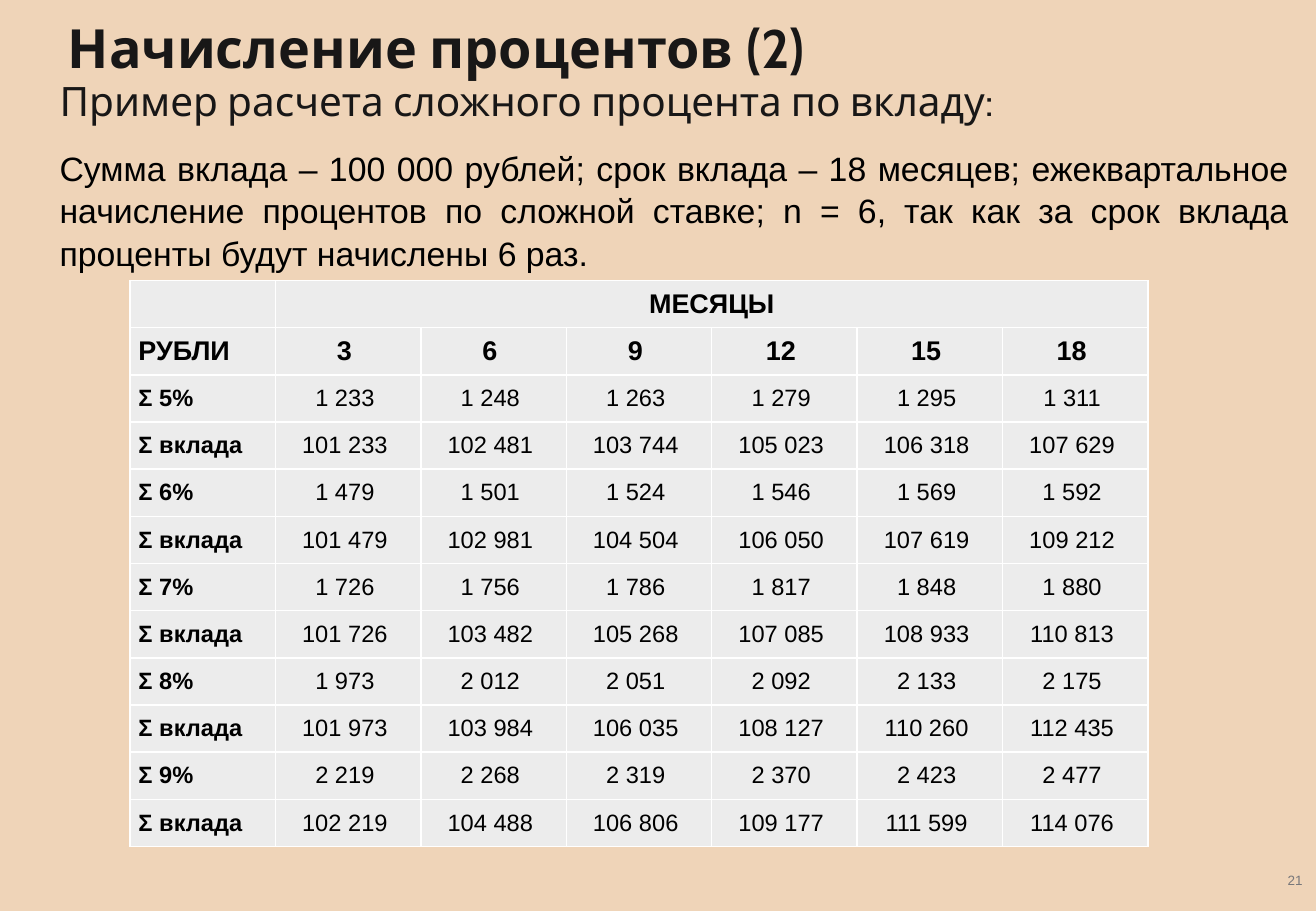
import dataclasses

import lxml.etree
import pptx
import pptx.dml.color
import pptx.enum.text
import pptx.oxml.ns
import pptx.util

Inches = pptx.util.Inches
Pt = pptx.util.Pt
Align = pptx.enum.text.PP_ALIGN
Anchor = pptx.enum.text.MSO_ANCHOR

COLORS = {
    "background": "EFD4B8",
    "heading": "181717",
    "body": "000000",
    "page": "77777A",
    "cell": "ECECEC",
    "border": "FFFFFF",
}


@dataclasses.dataclass
class Style:
    size: float
    color: str = "body"
    font: str = "Arial"
    bold: bool = False
    align: Align = Align.LEFT
    before: float = 0
    after: float = 0
    spacing: float = 1.0


@dataclasses.dataclass
class TextBlock:
    box: tuple[float, float, float, float]
    lines: list[tuple[str, Style]]
    insets: tuple[float, float] = (0, 0)
    anchor: Anchor = Anchor.TOP


def rgb(name: str) -> pptx.dml.color.RGBColor:
    return pptx.dml.color.RGBColor.from_string(COLORS[name])


def write(paragraph, text: str, style: Style) -> None:
    paragraph.text = text
    paragraph.alignment = style.align
    paragraph.space_before = Pt(style.before)
    paragraph.space_after = Pt(style.after)
    paragraph.line_spacing = style.spacing
    for run in paragraph.runs:
        run.font.name = style.font
        run.font.size = Pt(style.size)
        run.font.bold = style.bold
        run.font.color.rgb = rgb(style.color)


def add_text(slide, block: TextBlock) -> None:
    frame = slide.shapes.add_textbox(*map(Inches, block.box)).text_frame
    frame.word_wrap = True
    frame.vertical_anchor = block.anchor
    frame.margin_left = frame.margin_right = Inches(block.insets[0])
    frame.margin_top = frame.margin_bottom = Inches(block.insets[1])
    for index, (text, style) in enumerate(block.lines):
        paragraph = frame.add_paragraph() if index else frame.paragraphs[0]
        write(paragraph, text, style)


def format_cell(cell) -> None:
    cell.vertical_anchor = Anchor.MIDDLE
    cell.margin_left = cell.margin_right = Inches(0.07)
    cell.margin_top = cell.margin_bottom = 0
    cell.fill.solid()
    cell.fill.fore_color.rgb = rgb("cell")
    # Borders come before the fill in the cell properties
    qn = pptx.oxml.ns.qn
    properties = cell._tc.get_or_add_tcPr()
    for index, side in enumerate(("lnL", "lnR", "lnT", "lnB")):
        line = lxml.etree.Element(qn(f"a:{side}"), w=str(Pt(1)))
        fill = lxml.etree.SubElement(line, qn("a:solidFill"))
        lxml.etree.SubElement(fill, qn("a:srgbClr"), val=COLORS["border"])
        properties.insert(index, line)


# Content
HEADING = Style(32, "heading", "Cabin", bold=True, before=10, spacing=0.9)
SUBHEADING = Style(24, "heading", "Cabin", align=Align.JUSTIFY, before=6, after=6)
BODY = Style(20, align=Align.JUSTIFY, before=6, after=6, spacing=1.05)
PAGE = Style(8, "page", align=Align.RIGHT)
TABLE_HEAD = Style(16, bold=True, align=Align.CENTER)
TABLE_CORNER = Style(16, bold=True)
ROW_LABEL = Style(14, bold=True)
AMOUNT = Style(14, align=Align.CENTER)

EXAMPLE = TextBlock((0.49, 0.63, 10.12, 6.36), [
    ("Пример расчета сложного процента по вкладу:", SUBHEADING),
    ("Сумма вклада – 100 000 рублей; срок вклада – 18 месяцев; "
     "ежеквартальное начисление процентов по сложной ставке; n = 6, "
     "так как за срок вклада проценты будут начислены 6 раз. ", BODY),
])
TITLE = TextBlock((0.46, 0.13, 10.37, 0.57),
                  [("Начисление процентов (2)", HEADING)], (0.1, 0.05))
PAGE_NUMBER = TextBlock((10.29, 6.99, 0.43, 0.51), [("21", PAGE)],
                        anchor=Anchor.MIDDLE)

MONTHS = [3, 6, 9, 12, 15, 18]
# Rate: (interest per quarter, deposit after each quarter)
DEPOSITS = {
    5: ([1233, 1248, 1263, 1279, 1295, 1311],
        [101233, 102481, 103744, 105023, 106318, 107629]),
    6: ([1479, 1501, 1524, 1546, 1569, 1592],
        [101479, 102981, 104504, 106050, 107619, 109212]),
    7: ([1726, 1756, 1786, 1817, 1848, 1880],
        [101726, 103482, 105268, 107085, 108933, 110813]),
    8: ([1973, 2012, 2051, 2092, 2133, 2175],
        [101973, 103984, 106035, 108127, 110260, 112435]),
    9: ([2219, 2268, 2319, 2370, 2423, 2477],
        [102219, 104488, 106806, 109177, 111599, 114076]),
}


def add_deposit_table(slide) -> None:
    rows: list[tuple[str, list[int]]] = [("РУБЛИ", MONTHS)]
    for rate, (interest, deposit) in DEPOSITS.items():
        rows += [(f"Σ {rate}%", interest), ("Σ вклада", deposit)]

    frame = slide.shapes.add_table(
        len(rows) + 1, len(MONTHS) + 1,
        Inches(1.07), Inches(2.31), Inches(8.38), Inches(4.66))
    table = frame.table
    table.first_row = table.horz_banding = False
    for cell in table.iter_cells():
        format_cell(cell)

    # Header over the month columns
    table.cell(0, 1).merge(table.cell(0, len(MONTHS)))
    write(table.cell(0, 1).text_frame.paragraphs[0], "МЕСЯЦЫ", TABLE_HEAD)

    # Month row, then two rows per rate
    for row, (label, values) in enumerate(rows, start=1):
        label_style, value_style = (
            (TABLE_CORNER, TABLE_HEAD) if row == 1 else (ROW_LABEL, AMOUNT))
        write(table.cell(row, 0).text_frame.paragraphs[0], label, label_style)
        for column, value in enumerate(values, start=1):
            text = f"{value:,} ".replace(",", " ")
            write(table.cell(row, column).text_frame.paragraphs[0],
                  text, value_style)


def main() -> None:
    deck = pptx.Presentation()
    deck.slide_width, deck.slide_height = Inches(10.83), Inches(7.5)
    slide = deck.slides.add_slide(deck.slide_layouts[6])
    slide.background.fill.solid()
    slide.background.fill.fore_color.rgb = rgb("background")

    add_text(slide, EXAMPLE)
    add_deposit_table(slide)
    add_text(slide, TITLE)
    add_text(slide, PAGE_NUMBER)
    deck.save("out.pptx")


if __name__ == "__main__":
    main()
